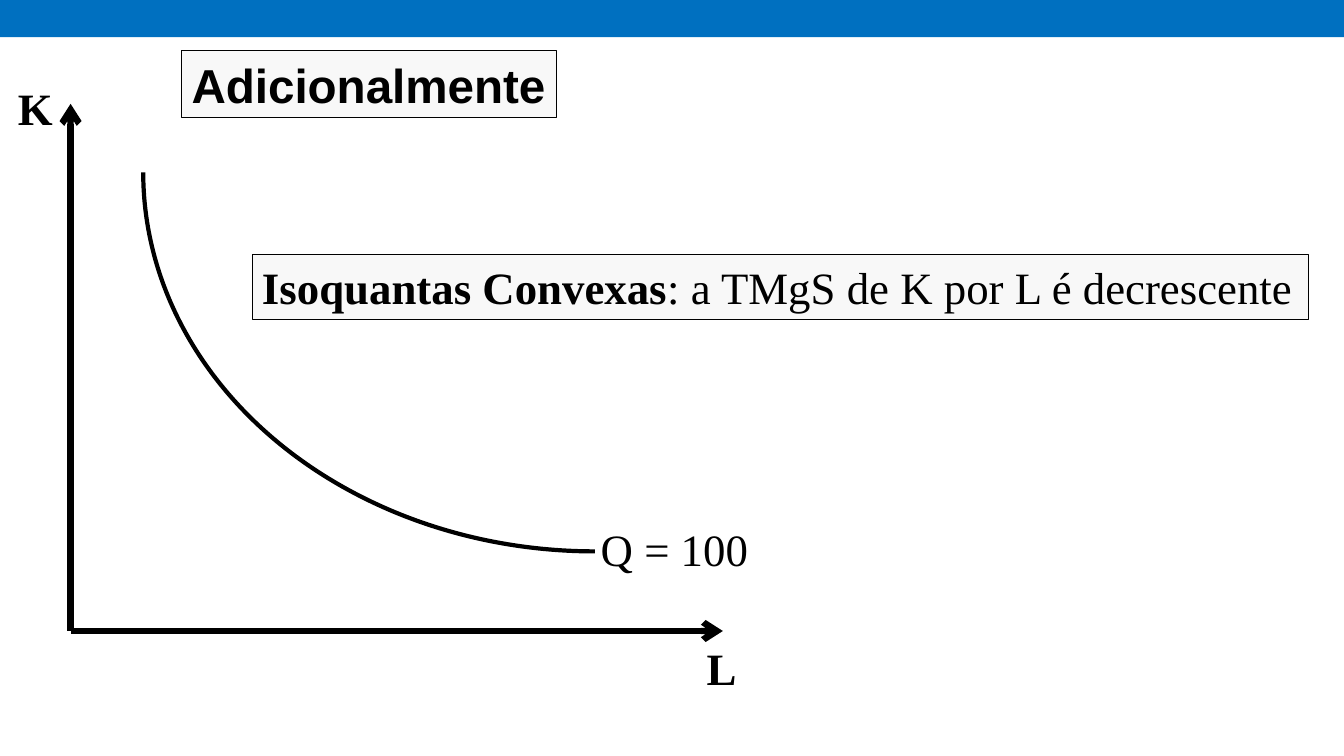
"""Builds a slide on convex isoquants, with a K-L diagram."""
from lxml import etree
from pptx import Presentation
from pptx.dml.color import RGBColor
from pptx.enum.shapes import MSO_CONNECTOR, MSO_SHAPE
from pptx.enum.text import MSO_ANCHOR, MSO_AUTO_SIZE, PP_ALIGN
from pptx.oxml.ns import qn
from pptx.util import Inches, Pt

RECT, ARC, STRAIGHT = MSO_SHAPE.RECTANGLE, MSO_SHAPE.ARC, MSO_CONNECTOR.STRAIGHT
LEFT, TOP, NO_FIT = PP_ALIGN.LEFT, MSO_ANCHOR.TOP, MSO_AUTO_SIZE.NONE
BLACK = RGBColor(0, 0, 0)
BLUE = RGBColor(0x00, 0x70, 0xC0)
PALE = RGBColor(0xF8, 0xF8, 0xF8)
SERIF, SANS = "Times New Roman", "Arial"

W, H = 13.33, 7.5
BAND = 0.37
ROW = 0.64
ORIGIN = (0.7, 6.26)
AXIS_TIPS = [(0.7, 1.03), (7.17, 6.26)]
CURVE_TOP, CURVE_END = (1.42, 1.71), (5.9, 5.47)

TITLE = [("Adicionalmente", True)]
TITLE_BOX = (1.8, 0.5, 3.72, 0.67)
NOTE = [("Isoquantas Convexas", True), (": a TMgS de K por L é decrescente", False)]
NOTE_BOX = (2.5, 2.53, 10.48, ROW)
LABELS = [
    ([("K", True)], (0.08, 0.75, 0.95, ROW)),
    ([("L", True)], (6.91, 6.31, 0.95, ROW)),
    ([("Q = 100", False)], (5.86, 5.13, 1.7, ROW)),
]

prs = Presentation()
prs.slide_width, prs.slide_height = Inches(W), Inches(H)
s = prs.slides.add_slide(prs.slide_layouts[5])


def inches(values):
    return [Inches(v) for v in values]


def write(sp, runs, font=SERIF, size=32):
    tf = sp.text_frame
    tf.word_wrap, tf.auto_size, tf.vertical_anchor = True, NO_FIT, TOP
    p = tf.paragraphs[0]
    p.alignment = LEFT
    for text, bold in runs:
        r = p.add_run()
        r.text = text
        r.font.name, r.font.size, r.font.bold = font, Pt(size), bold
        r.font.color.rgb = BLACK


def frame(sp, fill, line=None):
    sp.fill.solid()
    sp.fill.fore_color.rgb = fill
    if line is None:
        sp.line.fill.background()
    else:
        sp.line.color.rgb = line
        sp.line.width = Pt(0.75)


def add_axis(tip):
    line = s.shapes.add_connector(STRAIGHT, *inches(ORIGIN + tip))
    line.line.color.rgb = BLACK
    line.line.width = Pt(4.5)
    ln = line.line._get_or_add_ln()
    etree.SubElement(ln, qn("a:tailEnd"), type="arrow")
    etree.SubElement(line._element.spPr, qn("a:effectLst"))


def add_isoquant():
    (x, top), (end, y) = CURVE_TOP, CURVE_END
    rx, ry = end - x, y - top
    arc = s.shapes.add_shape(ARC, *inches((x, top - ry, 2 * rx, 2 * ry)))
    arc.rotation = 180
    arc.shadow.inherit = False
    arc.fill.background()
    arc.line.color.rgb = BLACK
    arc.line.width = Pt(3)


band = s.shapes.add_shape(RECT, *inches((0, 0, W, BAND)))
band.shadow.inherit = False
frame(band, BLUE)

title = s.shapes.title
title.left, title.top, title.width, title.height = inches(TITLE_BOX)
frame(title, PALE, BLACK)
write(title, TITLE, font=SANS, size=34)

for tip in AXIS_TIPS:
    add_axis(tip)
add_isoquant()

for runs, box in LABELS:
    write(s.shapes.add_textbox(*inches(box)), runs)

note = s.shapes.add_shape(RECT, *inches(NOTE_BOX))
note.shadow.inherit = False
frame(note, PALE, BLACK)
write(note, NOTE)

prs.save("out.pptx")
